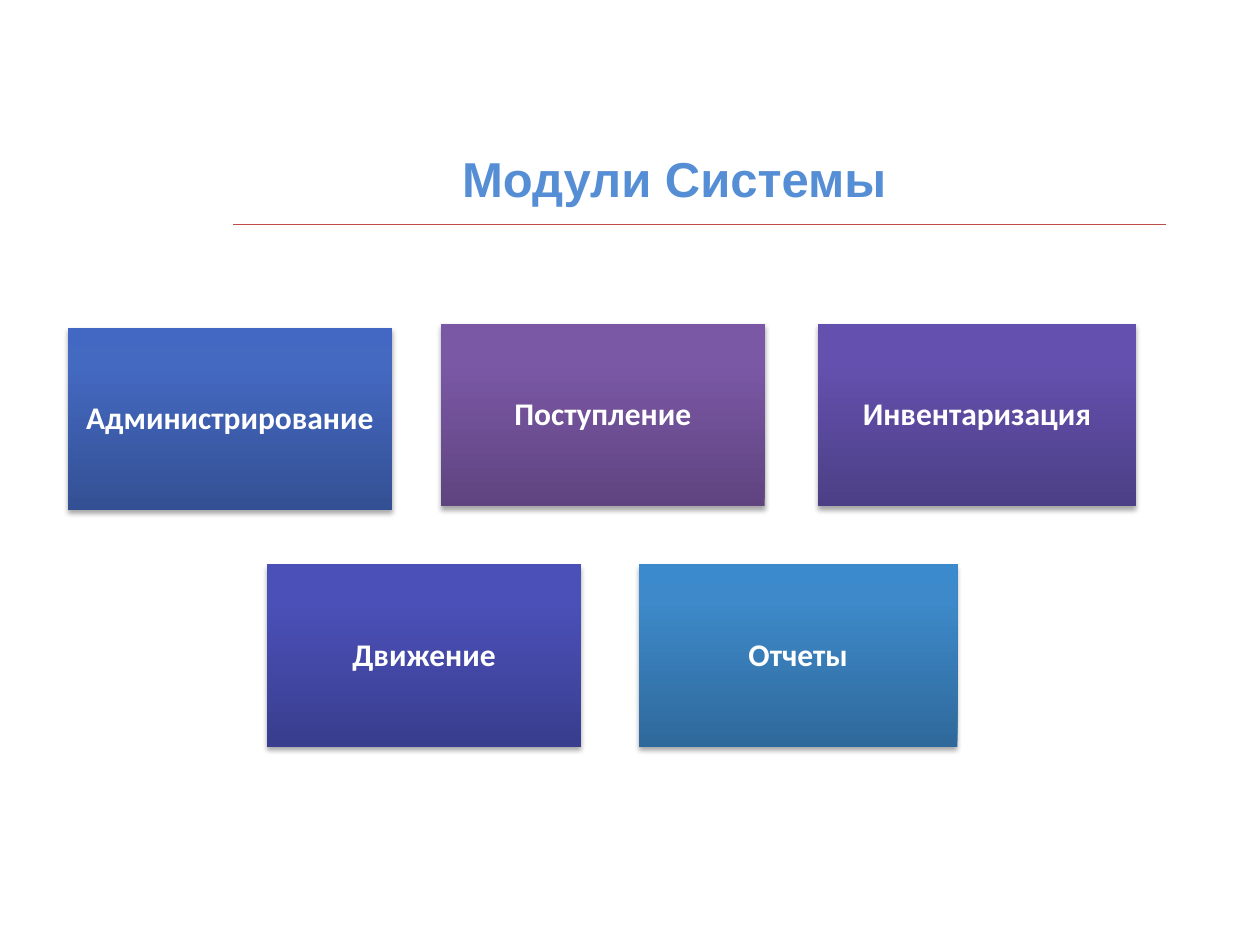
from dataclasses import dataclass

import lxml.etree
import pptx
import pptx.dml.color
import pptx.enum.shapes
import pptx.enum.text
import pptx.oxml
import pptx.oxml.ns
import pptx.util

Inches = pptx.util.Inches
Pt = pptx.util.Pt
qn = pptx.oxml.ns.qn
CENTER = pptx.enum.text.PP_ALIGN.CENTER
MIDDLE = pptx.enum.text.MSO_ANCHOR.MIDDLE

MODULE_HEIGHT = 1.45
MODULE_INSET = 0.07
LOWER_ROW_TOP = 4.48


@dataclass
class Module:
    name: str
    left: float
    top: float
    width: float
    colors: tuple[str, str, str]  # bottom, near the top, top


MODULES = [
    Module("Поступление", 3.5, 2.57, 2.57, ("5F4480", "7B58A6", "7C57A8")),
    Module("Инвентаризация", 6.49, 2.57, 2.53, ("4D3F86", "6451AF", "6450B1")),
    Module("Движение", 2.12, LOWER_ROW_TOP, 2.49, ("393D8E", "4B50B8", "494EBB")),
    Module("Администрирование", 0.54, 2.6, 2.57, ("345094", "4469C1", "4268C4")),
    Module("Отчеты", 5.07, LOWER_ROW_TOP, 2.53, ("2F699B", "3D89C9", "3B8ACD")),
]


def rgb(color: str) -> pptx.dml.color.RGBColor:
    return pptx.dml.color.RGBColor.from_string(color)


def format_text(shape, text: str, font: str, size: float, color: str):
    """Write one bold, centred paragraph and return it."""
    frame = shape.text_frame
    frame.text = text
    frame.word_wrap = True
    frame.vertical_anchor = MIDDLE
    paragraph = frame.paragraphs[0]
    paragraph.alignment = CENTER
    paragraph.font.name = font
    paragraph.font.size = Pt(size)
    paragraph.font.bold = True
    paragraph.font.color.rgb = rgb(color)
    return paragraph


def set_gradient(shape, colors: tuple[str, str, str]) -> None:
    """Fill from bottom to top with stops at 0, 80 and 100 percent."""
    gradient = lxml.etree.Element(qn("a:gradFill"), rotWithShape="1")
    stops = lxml.etree.SubElement(gradient, qn("a:gsLst"))
    for percent, color in zip((0, 80, 100), colors):
        stop = lxml.etree.SubElement(stops, qn("a:gs"), pos=str(percent * 1000))
        lxml.etree.SubElement(stop, qn("a:srgbClr"), val=color)
    lxml.etree.SubElement(gradient, qn("a:lin"), ang=str(270 * 60000), scaled="0")
    shape._element.spPr.find(qn("a:ln")).addprevious(gradient)


def set_shadow(shape) -> None:
    """Cast a soft black shadow straight down."""
    shape.shadow.inherit = False
    effects = shape._element.spPr.find(qn("a:effectLst"))
    shadow = lxml.etree.SubElement(
        effects, qn("a:outerShdw"), blurRad=str(Pt(3.1)), dist=str(Pt(1.8)),
        dir=str(90 * 60000), rotWithShape="0")
    color = lxml.etree.SubElement(shadow, qn("a:srgbClr"), val="000000")
    lxml.etree.SubElement(color, qn("a:alpha"), val="35000")


def add_module(slide, module: Module) -> None:
    shape = slide.shapes.add_shape(
        pptx.enum.shapes.MSO_SHAPE.RECTANGLE, Inches(module.left),
        Inches(module.top), Inches(module.width), Inches(MODULE_HEIGHT))
    shape.line.fill.background()
    set_gradient(shape, module.colors)
    set_shadow(shape)
    frame = shape.text_frame
    frame.margin_left = frame.margin_right = Inches(MODULE_INSET)
    frame.margin_top = frame.margin_bottom = Inches(MODULE_INSET)
    paragraph = format_text(shape, module.name, "Calibri", 18, "FFFFFF")
    paragraph.line_spacing = 0.9


def add_rule(slide, left: float, right: float, top: float) -> None:
    rule = slide.shapes.add_connector(
        pptx.enum.shapes.MSO_CONNECTOR.STRAIGHT,
        Inches(left), Inches(top), Inches(right), Inches(top))
    rule.line.color.rgb = rgb("BF4C48")
    rule.line.width = Pt(0.75)
    lxml.etree.SubElement(rule._element.spPr, qn("a:effectLst"))


def main() -> None:
    presentation = pptx.Presentation()
    presentation.slide_width = Inches(10)
    presentation.slide_height = Inches(7.5)
    slide = presentation.slides.add_slide(presentation.slide_layouts[5])

    # Modules
    for module in MODULES:
        add_module(slide, module)

    # Title and the rule below it
    title = slide.shapes.title
    title.left, title.top = Inches(1.69), Inches(1.13)
    title.width, title.height = Inches(7.32), Inches(0.57)
    format_text(title, "Модули Системы", "Arial", 28, "558ED5")
    title.text_frame.auto_size = pptx.enum.text.MSO_AUTO_SIZE.NONE
    add_rule(slide, 1.85, 9.25, 1.78)

    presentation.save("out.pptx")


if __name__ == "__main__":
    main()
